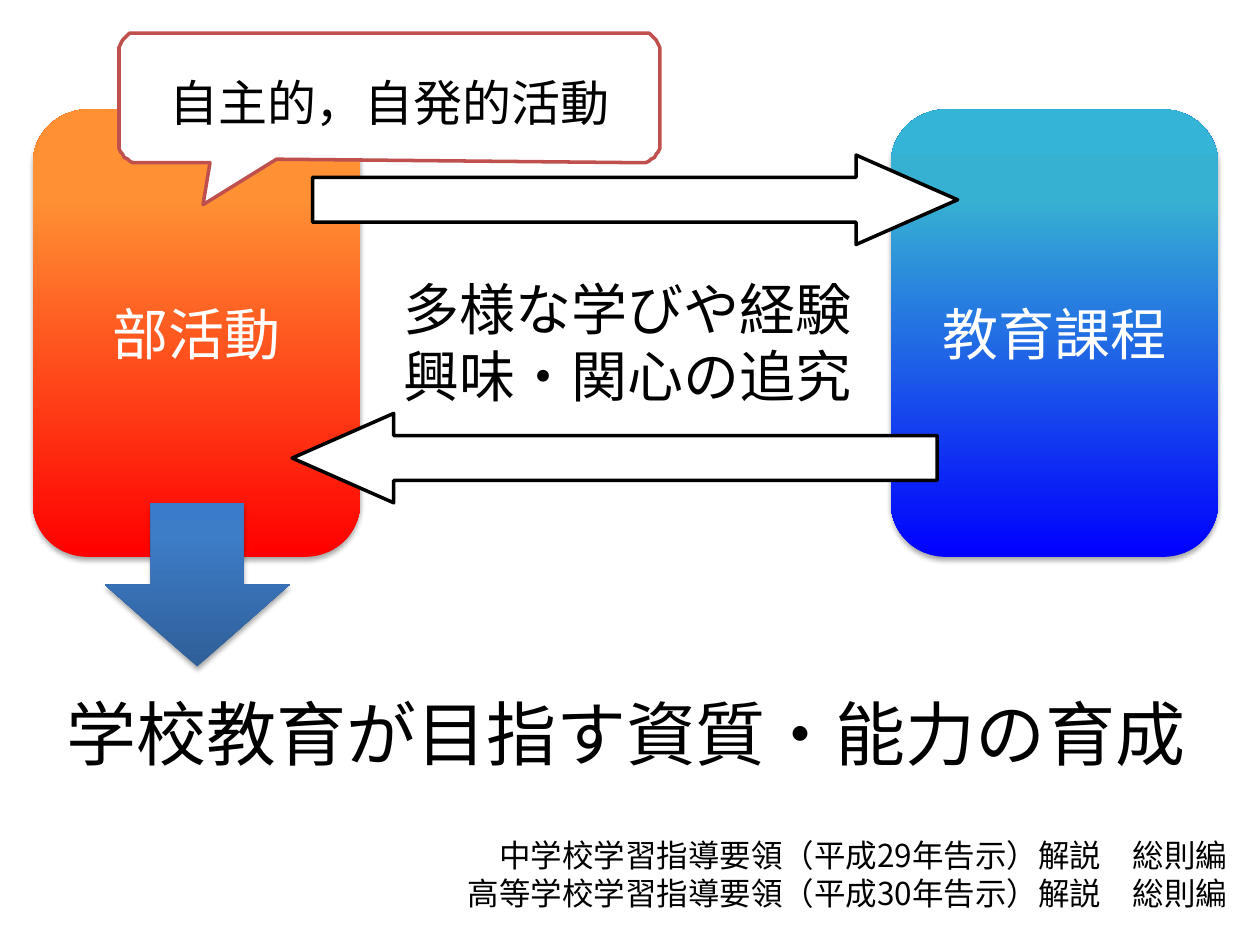
from math import cos, sin, radians

from lxml.etree import SubElement
from pptx import Presentation
from pptx.dml.color import RGBColor
from pptx.enum.shapes import MSO_SHAPE
from pptx.enum.text import MSO_ANCHOR, PP_ALIGN
from pptx.oxml import parse_xml
from pptx.oxml.ns import qn
from pptx.util import Pt

FONT = "Noto Sans CJK JP"
A_NS = "http://schemas.openxmlformats.org/drawingml/2006/main"

# Content: left, top, width, height in points
PANEL_TOP, PANEL_W, PANEL_H = 62.6, 187.2, 255.6
PANELS = [
    ("部活動", 18.7, ["FF0000", "FF9034", "FF9136"]),
    ("教育課程", 509, ["0000FF", "37B1D2", "34B4D6"]),
]
ARROW_W, ARROW_H = 368.6, 51.1
ARROWS = [(167, 236.2, True), (178.6, 88.6, False)]  # left, top, points left
DOWN_ARROW = (59.8, 287.3, 105.8, 93.6)
DOWN_COLORS = ["2F5F99", "3D7CC7", "3A7CCB"]
LABELS = [
    (["多様な学びや経験", "興味・関心の追究"],
     (205.2, 152.6, 306.7, 85), 32, PP_ALIGN.CENTER),
    (["中学校学習指導要領（平成29年告示）解説　総則編",
      "高等学校学習指導要領（平成30年告示）解説　総則編"],
     (167, 473.8, 541.4, 51.1), 18, PP_ALIGN.RIGHT),
    (["学校教育が目指す資質・能力の育成"],
     (31, 388.8, 671.8, 59), 40, PP_ALIGN.LEFT),
]
BUBBLE_TEXT = "自主的，自発的活動"
BUBBLE = (67.7, 18.7, 377.3, 92.9)  # left, top, right, bottom
BUBBLE_TAIL = [(158.4, 91.4), (115.9, 116.6), (119.5, 92.9)]
CORNER_X, CORNER_Y = 10.1, 12.4


def rgb(value):
    return RGBColor.from_string(value)


def box(left, top, width, height):
    return Pt(left), Pt(top), Pt(width), Pt(height)


def write(s, lines, size=32, color="000000", align=PP_ALIGN.CENTER,
          anchor=MSO_ANCHOR.MIDDLE):
    tf = s.text_frame
    tf.word_wrap = True
    tf.vertical_anchor = anchor
    for i, line in enumerate(lines):
        p = tf.add_paragraph() if i else tf.paragraphs[0]
        p.alignment = align
        p.line_spacing = Pt(round(size * 1.2, 1))
        r = p.add_run()
        r.text = line
        r.font.size = Pt(size)
        r.font.name = FONT
        r.font.color.rgb = rgb(color)
        SubElement(r.font._element, qn("a:ea"), typeface=FONT)


def outline(s, color):
    s.shadow.inherit = False
    s.fill.solid()
    s.fill.fore_color.rgb = rgb("FFFFFF")
    s.line.color.rgb = rgb(color)
    s.line.width = Pt(2)


def shade(s, colors):
    """Upward three-stop gradient, no line, soft shadow below."""
    s.shadow.inherit = False
    s.line.fill.background()
    stops = "".join(
        f'<a:gs pos="{pos}000"><a:srgbClr val="{c}"/></a:gs>'
        for pos, c in zip((0, 80, 100), colors))
    spPr = s._element.spPr
    spPr.find(qn("a:prstGeom")).addnext(parse_xml(
        f'<a:gradFill xmlns:a="{A_NS}" rotWithShape="1"><a:gsLst>{stops}</a:gsLst>'
        '<a:lin ang="16200000" scaled="0"/></a:gradFill>'))
    spPr.find(qn("a:effectLst")).append(parse_xml(
        f'<a:outerShdw xmlns:a="{A_NS}" blurRad="{Pt(3.1)}" dist="{Pt(1.8)}" '
        'dir="5400000" rotWithShape="0"><a:srgbClr val="000000">'
        '<a:alpha val="35000"/></a:srgbClr></a:outerShdw>'))


def bubble_points():
    """Rounded rectangle, clockwise from top left, with a tail below."""
    left, top, right, bottom = BUBBLE
    x0, x1 = left + CORNER_X, right - CORNER_X
    y0, y1 = top + CORNER_Y, bottom - CORNER_Y
    points = []
    for i, (x, y) in enumerate([(x0, y0), (x1, y0), (x1, y1), (x0, y1)]):
        if i == 3:
            points += BUBBLE_TAIL
        for step in range(0, 91, 10):
            a = radians(180 + 90 * i + step)
            points.append((x + CORNER_X * cos(a), y + CORNER_Y * sin(a)))
    return points


prs = Presentation()
prs.slide_width, prs.slide_height = Pt(720), Pt(540)
shapes = prs.slides.add_slide(prs.slide_layouts[6]).shapes

# Two panels
for text, left, colors in PANELS:
    s = shapes.add_shape(MSO_SHAPE.ROUNDED_RECTANGLE,
                         *box(left, PANEL_TOP, PANEL_W, PANEL_H))
    shade(s, colors)
    write(s, [text], color="FFFFFF")

# Arrows between the panels
for left, top, flipped in ARROWS:
    s = shapes.add_shape(MSO_SHAPE.RIGHT_ARROW, *box(left, top, ARROW_W, ARROW_H))
    s.adjustments[0], s.adjustments[1] = 0.5, 1.135
    outline(s, "000000")
    if flipped:
        s._element.spPr.xfrm.set("flipH", "1")

# Free-standing text
for lines, place, size, align in LABELS:
    write(shapes.add_textbox(*box(*place)), lines, size=size, align=align)

# Speech bubble
start, *rest = bubble_points()
builder = shapes.build_freeform(*start, scale=Pt(1))
builder.add_line_segments(rest, close=True)
s = builder.convert_to_shape()
outline(s, "C0504D")
s.text_frame.margin_top = Pt(22.3)
write(s, [BUBBLE_TEXT], size=28, anchor=MSO_ANCHOR.TOP)

# Arrow down to the conclusion
shade(shapes.add_shape(MSO_SHAPE.DOWN_ARROW, *box(*DOWN_ARROW)), DOWN_COLORS)

prs.save("out.pptx")
